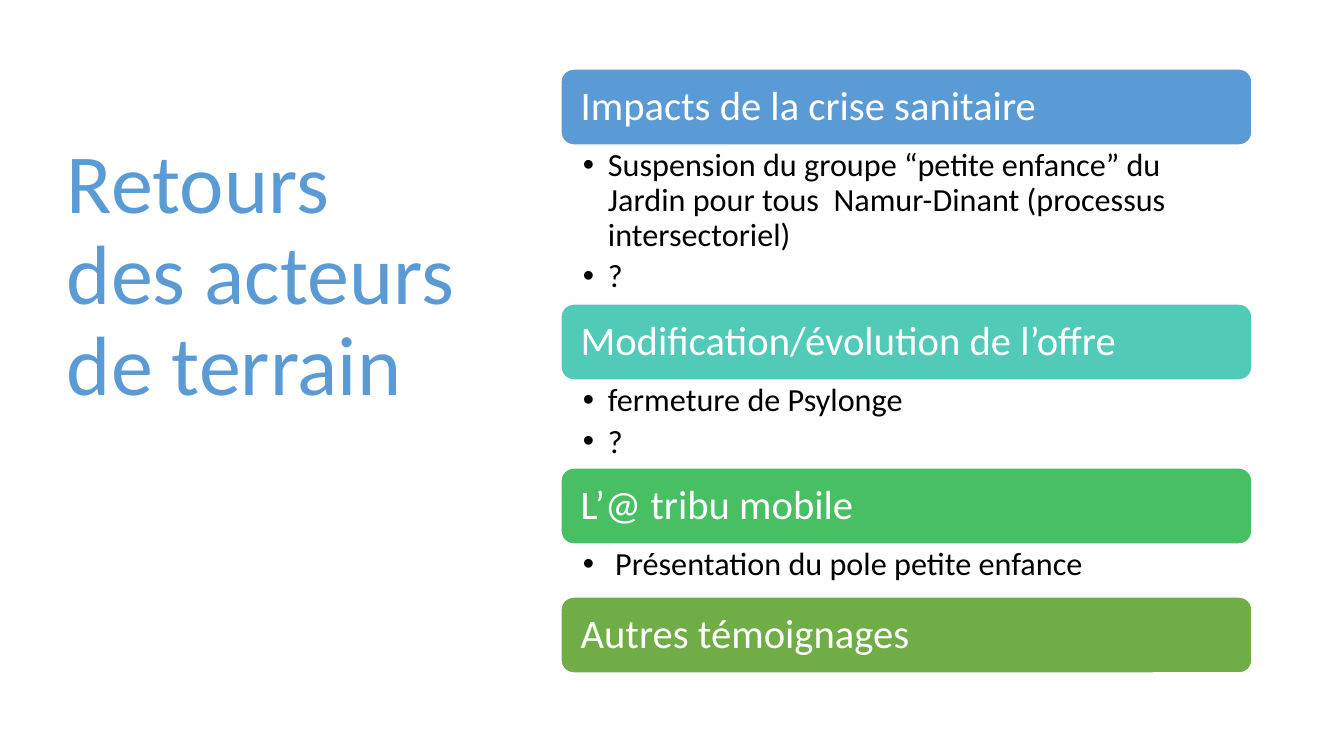
from lxml import etree
from pptx import Presentation
from pptx.dml.color import RGBColor
from pptx.enum.shapes import MSO_SHAPE
from pptx.enum.text import MSO_ANCHOR, PP_ALIGN
from pptx.oxml.ns import qn
from pptx.util import Emu, Pt

ROUNDED = MSO_SHAPE.ROUNDED_RECTANGLE
TOP, MIDDLE = MSO_ANCHOR.TOP, MSO_ANCHOR.MIDDLE
LEFT = PP_ALIGN.LEFT

TITLE = "Retours des acteurs de terrain"
SECTIONS = [
    ("Impacts de la crise sanitaire", "blue", 159, [
        "Suspension du groupe “petite enfance” du Jardin pour tous  Namur-Dinant (processus intersectoriel)",
        "?",
    ]),
    ("Modification/évolution de l’offre", "teal", 88, ["fermeture de Psylonge", "?"]),
    ("L’@ tribu mobile", "green", 53, [" Présentation du pole petite enfance"]),
    ("Autres témoignages", "olive", 0, []),
]
COLORS = {
    "blue": "5B9BD5",
    "teal": "52CAB8",
    "green": "49BF64",
    "olive": "70AD47",
    "white": "FFFFFF",
    "black": "000000",
}
FONT = "Calibri"
SLIDE_W, SLIDE_H = 1344, 756
TITLE_BOX = (57, 69, 419, 607)
LIST_X, LIST_Y, LIST_W = 561, 69, 691
HEADING_H = 76
BULLET_INDENT = 25

TITLE_STYLE = {"size": 60, "color": "blue", "anchor": TOP, "insets": (10, 72, 14, 5), "after": 0}
HEADING_STYLE = {"size": 29, "color": "white", "anchor": MIDDLE, "insets": (16, 12, 16, 12), "after": 0}
BULLET_STYLE = {"size": 23, "color": "black", "anchor": TOP, "insets": (22, 4, 23, 4), "after": 4.6}


def px(length):
    return Emu(round(length * 914400 / 100.8))


def rgb(name):
    return RGBColor.from_string(COLORS[name])


def write(holder, lines, style):
    frame = holder.text_frame
    left, top, right, bottom = map(px, style["insets"])
    frame_format = {
        "word_wrap": True,
        "vertical_anchor": style["anchor"],
        "margin_left": left,
        "margin_top": top,
        "margin_right": right,
        "margin_bottom": bottom,
    }
    for name, value in frame_format.items():
        setattr(frame, name, value)
    frame.text = "\n".join(lines)
    paragraph_format = {"alignment": LEFT, "line_spacing": 0.9, "space_after": Pt(style["after"])}
    font_format = {"name": FONT, "size": Pt(style["size"])}
    for paragraph in frame.paragraphs:
        for name, value in paragraph_format.items():
            setattr(paragraph, name, value)
        for run in paragraph.runs:
            for name, value in font_format.items():
                setattr(run.font, name, value)
            run.font.color.rgb = rgb(style["color"])
    return frame.paragraphs


def add_bullet(paragraph):
    properties = paragraph._p.get_or_add_pPr()
    properties.set("marL", str(px(BULLET_INDENT)))
    properties.set("indent", str(-px(BULLET_INDENT)))
    etree.SubElement(properties, qn("a:buFont")).set("typeface", "Arial")
    etree.SubElement(properties, qn("a:buChar")).set("char", "•")


def add_heading(slide, y, text, color):
    heading = slide.shapes.add_shape(ROUNDED, *map(px, (LIST_X, y, LIST_W, HEADING_H)))
    heading.shadow.inherit = False
    heading.fill.solid()
    heading.fill.fore_color.rgb = rgb(color)
    heading.line.color.rgb = rgb("white")
    heading.line.width = Pt(1)
    write(heading, [text], HEADING_STYLE)


def add_details(slide, y, height, lines):
    details = slide.shapes.add_textbox(*map(px, (LIST_X, y, LIST_W, height)))
    for paragraph in write(details, lines, BULLET_STYLE):
        add_bullet(paragraph)


def main():
    deck = Presentation()
    deck.slide_width, deck.slide_height = px(SLIDE_W), px(SLIDE_H)
    slide = deck.slides.add_slide(deck.slide_layouts[6])

    title = slide.shapes.add_textbox(*map(px, TITLE_BOX))
    write(title, [TITLE], TITLE_STYLE)

    y = LIST_Y
    for heading, color, details_h, details in SECTIONS:
        add_heading(slide, y, heading, color)
        y += HEADING_H
        if details:
            add_details(slide, y, details_h, details)
            y += details_h

    deck.save("out.pptx")


if __name__ == "__main__":
    main()
